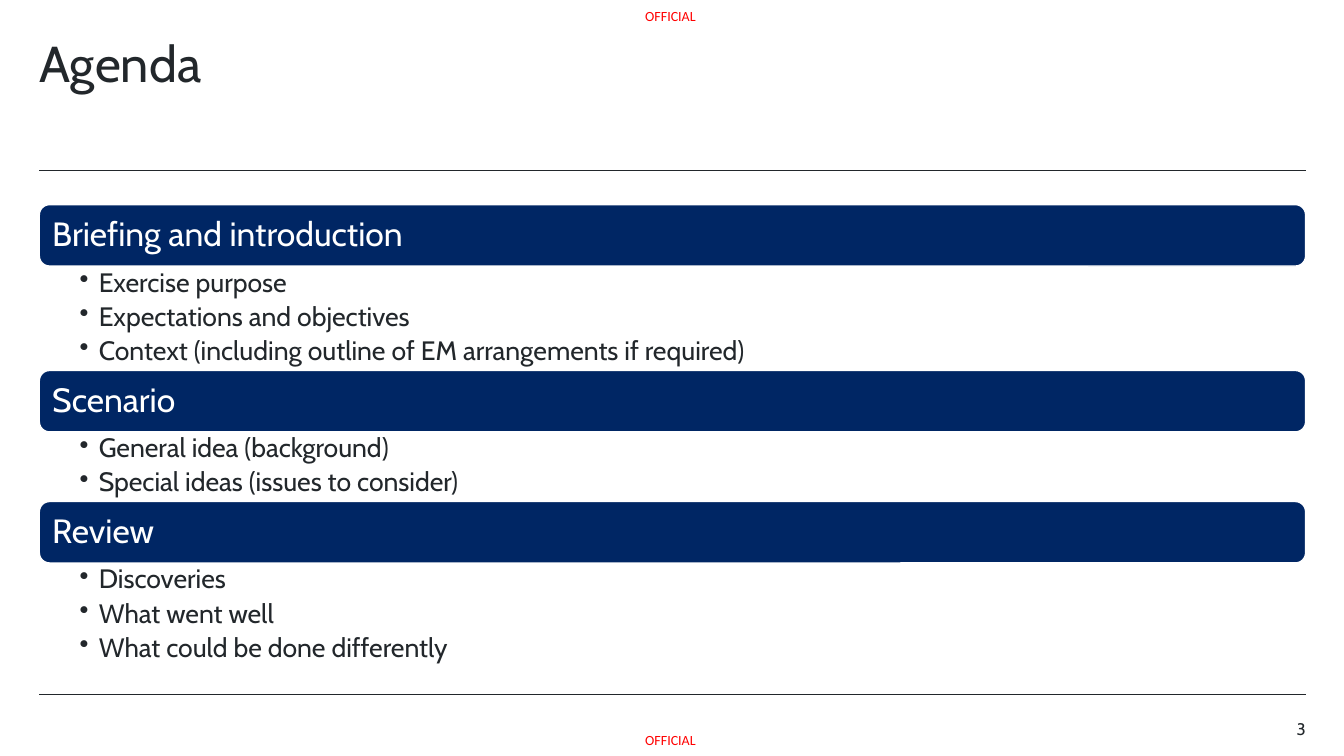
from lxml.etree import SubElement
from pptx import Presentation
from pptx.dml.color import RGBColor
from pptx.enum.shapes import MSO_CONNECTOR, MSO_SHAPE
from pptx.enum.text import MSO_ANCHOR, PP_ALIGN
from pptx.oxml.ns import qn
from pptx.util import Inches, Pt

TITLE = "Agenda"
MARKING = "OFFICIAL"
PAGE = "3"
AGENDA = [
    ("Briefing and introduction", [
        "Exercise purpose",
        "Expectations and objectives",
        "Context (including outline of EM arrangements if required)",
    ]),
    ("Scenario", [
        "General idea (background)",
        "Special ideas (issues to consider)",
    ]),
    ("Review", [
        "Discoveries",
        "What went well",
        "What could be done differently",
    ]),
]

NAVY = RGBColor(0x00, 0x26, 0x64)
INK = RGBColor(0x22, 0x27, 0x2B)
RED = RGBColor(0xFF, 0x00, 0x00)
WHITE = RGBColor(0xFF, 0xFF, 0xFF)

WIDTH, HEIGHT = 13.33, 7.5
LEFT, RIGHT = 0.39, 12.95
SPAN = RIGHT - LEFT
RULES = (1.69, 6.89)
AGENDA_TOP = 2.03
BAR_H = 0.61
ITEM_H = 0.345
MARK_W, MARK_H, MARK_GAP = 0.53, 0.17, 0.07
PAGE_W = 0.79
INDENT = 0.19

prs = Presentation()
prs.slide_width, prs.slide_height = Inches(WIDTH), Inches(HEIGHT)
s = prs.slides.add_slide(prs.slide_layouts[6])


def set_frame(sp, insets, wrap=True):
    tf = sp.text_frame
    tf.word_wrap = wrap
    tf.margin_left, tf.margin_top, tf.margin_right, tf.margin_bottom = map(Inches, insets)
    return tf


def add_box(left, top, width, height, insets=(0, 0, 0, 0), wrap=True):
    sp = s.shapes.add_textbox(Inches(left), Inches(top), Inches(width), Inches(height))
    return set_frame(sp, insets, wrap)


def write(p, text, size, color=INK, font="Cabin", align=PP_ALIGN.LEFT, spacing=None):
    p.alignment = align
    p.line_spacing = spacing
    r = p.add_run()
    r.text = text
    r.font.size = Pt(size)
    r.font.name = font
    r.font.color.rgb = color


def add_bullet(p):
    p.level = 1
    pPr = p._p.get_or_add_pPr()
    pPr.set("marL", str(Inches(INDENT)))
    pPr.set("indent", str(-Inches(INDENT)))
    clr = SubElement(pPr, qn("a:buClr"))
    SubElement(clr, qn("a:srgbClr"), val=str(INK))
    SubElement(pPr, qn("a:buChar"), char="•")


def add_rule(y):
    ln = s.shapes.add_connector(MSO_CONNECTOR.STRAIGHT, Inches(LEFT), Inches(y), Inches(RIGHT), Inches(y))
    ln.line.color.rgb = INK
    ln.line.width = Pt(0.75)
    SubElement(ln._element.spPr, qn("a:effectLst"))


def add_bar(text, top):
    sp = s.shapes.add_shape(MSO_SHAPE.ROUNDED_RECTANGLE, Inches(LEFT), Inches(top), Inches(SPAN), Inches(BAR_H))
    sp.shadow.inherit = False
    sp.adjustments[0] = 1 / 6
    sp.fill.solid()
    sp.fill.fore_color.rgb = NAVY
    sp.line.color.rgb = WHITE
    sp.line.width = Pt(1)
    tf = set_frame(sp, (0.1, 0.1, 0.1, 0.1))
    tf.vertical_anchor = MSO_ANCHOR.MIDDLE
    write(tf.paragraphs[0], text, 24, WHITE, spacing=0.9)


def add_items(items, top):
    tf = add_box(LEFT, top, SPAN, len(items) * ITEM_H, (0.4, 0.03, 0.19, 0.03))
    for i, item in enumerate(items):
        p = tf.add_paragraph() if i else tf.paragraphs[0]
        add_bullet(p)
        if i:
            p.space_before = Pt(3.8)
        write(p, item, 19, spacing=0.9)


for y in (MARK_GAP, HEIGHT - MARK_GAP - MARK_H):
    tf = add_box((WIDTH - MARK_W) / 2, y, MARK_W, MARK_H, wrap=False)
    write(tf.paragraphs[0], MARKING, 10, RED, "Calibri")

for y in RULES:
    add_rule(y)

write(add_box(LEFT, 0.39, 11.02, 1.1).paragraphs[0], TITLE, 36, spacing=0.9)
write(add_box(RIGHT - PAGE_W, 7.13, PAGE_W, 0.2).paragraphs[0], PAGE, 12, align=PP_ALIGN.RIGHT)

top = AGENDA_TOP
for heading, items in AGENDA:
    add_bar(heading, top)
    add_items(items, top + BAR_H)
    top += BAR_H + len(items) * ITEM_H

prs.save("out.pptx")
